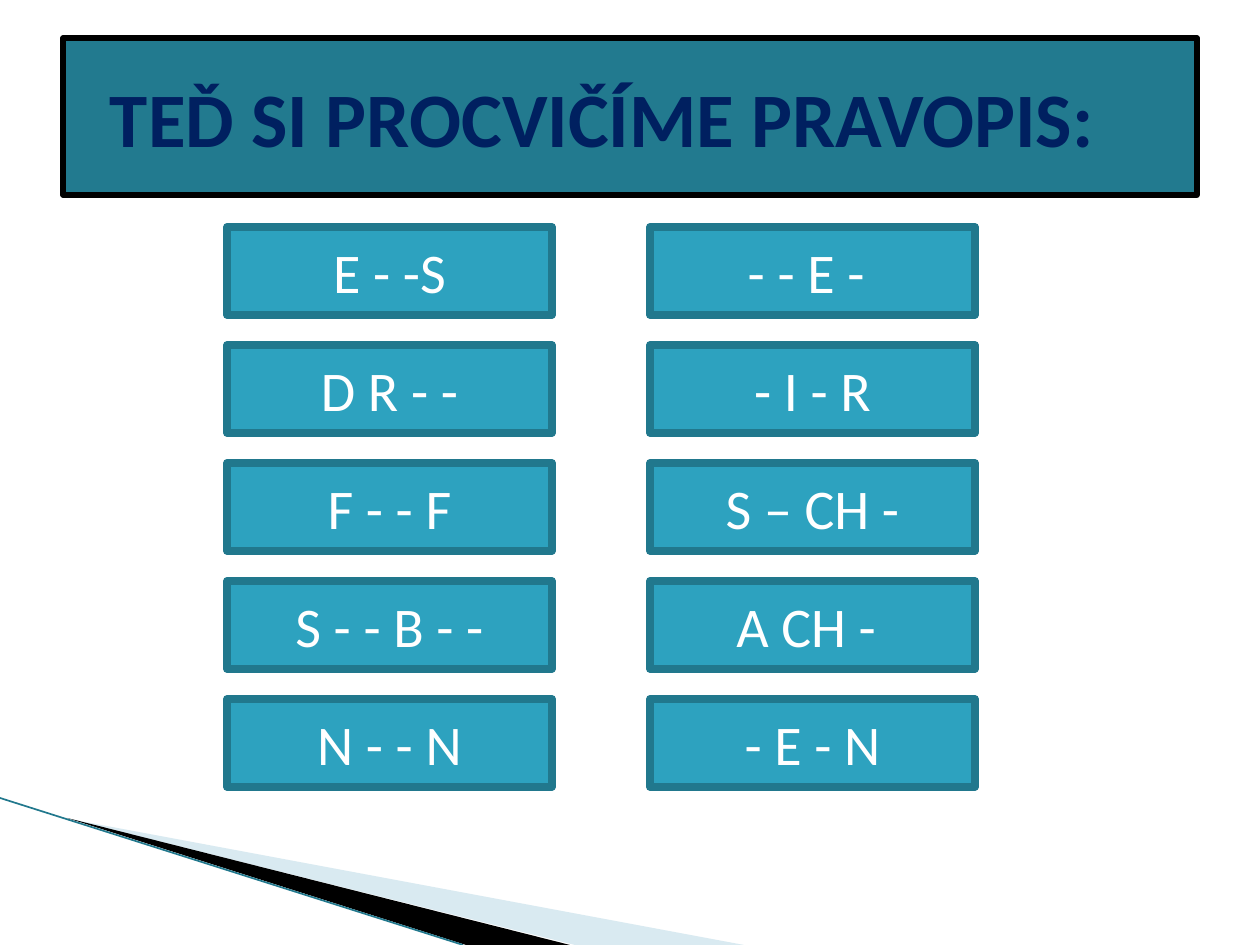
from lxml.etree import SubElement
from pptx import Presentation
from pptx.dml.color import RGBColor
from pptx.enum.shapes import MSO_CONNECTOR, MSO_SHAPE
from pptx.enum.text import MSO_ANCHOR, PP_ALIGN
from pptx.oxml.ns import qn
from pptx.util import Pt

PX = 914400 // 126
COLORS = {
    "pale": "A0CBDC",
    "black": "000000",
    "banner": "227A8F",
    "navy": "002060",
    "card": "2DA2BF",
    "edge": "21788D",
    "white": "FFFFFF",
}


def rgb(name):
    return RGBColor.from_string(COLORS[name])


def add_box(x, y, w, h, text, fill, line, width, size, color):
    """Add a bordered rectangle with one line of text; return the shape."""
    box = shapes.add_shape(MSO_SHAPE.RECTANGLE, x * PX, y * PX, w * PX, h * PX)
    box.shadow.inherit = False
    box.fill.solid()
    box.fill.fore_color.rgb = rgb(fill)
    box.line.color.rgb = rgb(line)
    box.line.width = Pt(width)
    frame = box.text_frame
    frame.word_wrap = True
    frame.vertical_anchor = MSO_ANCHOR.MIDDLE
    para = frame.paragraphs[0]
    para.text = text
    para.alignment = PP_ALIGN.CENTER
    para.font.name = "Calibri"
    para.font.size = Pt(size)
    para.font.color.rgb = rgb(color)
    return box


deck = Presentation()
deck.slide_width = 1260 * PX
deck.slide_height = 945 * PX
shapes = deck.slides.add_slide(deck.slide_layouts[6]).shapes

# Corner wedges
wedges = [
    ("pale", [(69, 819), (744, 945), (575, 945)]),
    ("black", [(67, 818), (570, 945), (466, 945)]),
]
for color, points in wedges:
    pen = shapes.build_freeform(*points[0], scale=PX)
    pen.add_line_segments(points[1:])
    wedge = pen.convert_to_shape()
    wedge.shadow.inherit = False
    wedge.fill.solid()
    wedge.fill.fore_color.rgb = rgb(color)
    wedge.line.fill.background()
    if color == "pale":
        tint = wedge._element.spPr.find(".//" + qn("a:srgbClr"))
        SubElement(tint, qn("a:alpha"), val="40000")

rule = shapes.add_connector(
    MSO_CONNECTOR.STRAIGHT, 0, 798 * PX, 463 * PX, 945 * PX)
rule.line.color.rgb = rgb("edge")
rule.line.width = Pt(0.95)
SubElement(rule._element.spPr, qn("a:effectLst"))

# Title
title = add_box(63, 38, 1134, 157, "TEĎ SI PROCVIČÍME PRAVOPIS:",
                "banner", "black", 3, 44, "navy")
title.text_frame.margin_left = 47 * PX
head = title.text_frame.paragraphs[0]
head.alignment = PP_ALIGN.LEFT
head.font.bold = True

# Word cards, two columns
columns = [
    (227, ["E - -S", "D R - -", "F - - F", "S - - B - -", "N - - N"]),
    (650, ["- - E - ", "- I - R", "S – CH -", "A CH - ", "- E - N"]),
]
for left, words in columns:
    for row, word in enumerate(words):
        add_box(left, 227 + 118 * row, 325, 88, word,
                "card", "edge", 4.33, 32, "white")

deck.save("out.pptx")
